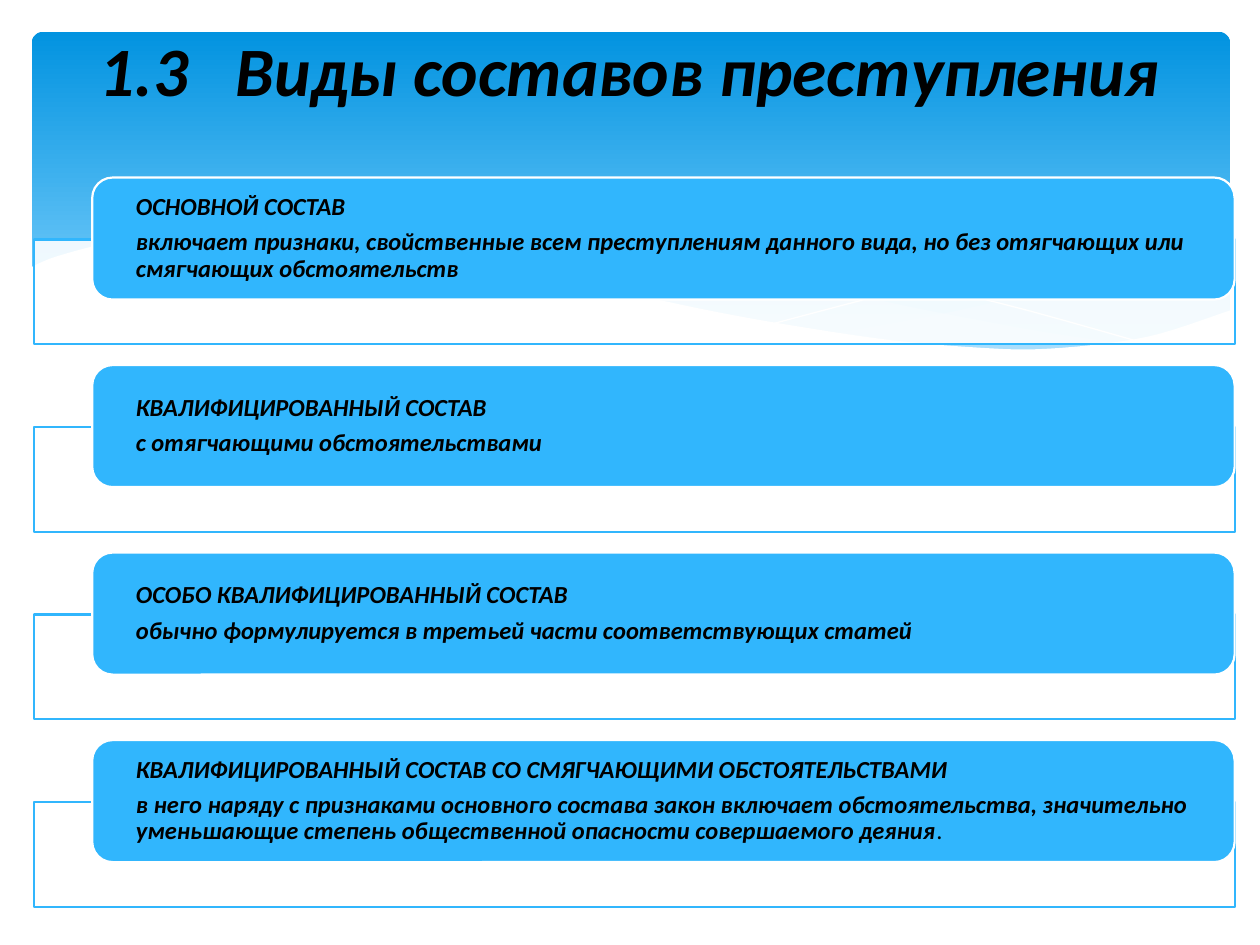
from dataclasses import dataclass

from lxml import etree
from pptx import Presentation
from pptx.dml.color import RGBColor
from pptx.enum.shapes import MSO_SHAPE
from pptx.enum.text import MSO_ANCHOR, MSO_AUTO_SIZE, PP_ALIGN
from pptx.oxml.ns import qn
from pptx.util import Cm, Pt

RECTANGLE, ROUNDED = MSO_SHAPE.RECTANGLE, MSO_SHAPE.ROUNDED_RECTANGLE
MIDDLE = MSO_ANCHOR.MIDDLE
LEFT, CENTER = PP_ALIGN.LEFT, PP_ALIGN.CENTER
TITLE_ONLY = 5


@dataclass(frozen=True)
class Theme:
    font: str = "Calibri"
    ink: str = "000000"
    white: str = "FFFFFF"
    accent: str = "31B6FD"
    wave: str = "C6E7FC"
    sky_top: str = "0293E0"
    sky_bottom: str = "83D3FE"
    title_size: float = 39.6
    body_size: float = 14
    border: float = 1.25


THEME = Theme()

# Edges of the waves, in centimetres from the corner of the banner
RIGHT_WAVE = [
    [(24.15, 4.44), (23.11, 4.62), (21.99, 4.85), (20.49, 5.2), (18.49, 5.66), (16.15, 6.09)],
    [(16.15, 6.09), (17.27, 6.24), (18.59, 6.37), (20.04, 6.42), (21.51, 6.32),
     (22.75, 6.09), (23.46, 5.89), (24.15, 5.63)],
]
LONG_WAVE = [
    [(6.62, 4.21), (7.69, 4.11), (9.01, 4.06), (10.59, 4.16), (12.42, 4.39), (14.19, 4.72),
     (15.34, 5), (17.29, 5.46), (19.05, 5.81), (20.62, 6.09), (22.04, 6.29)],
    [(22.04, 6.29), (20.9, 6.4), (19.58, 6.42), (18.05, 6.35), (16.25, 6.12),
     (14.19, 5.76), (11.83, 5.25), (10.21, 4.85), (8.55, 4.52), (6.62, 4.21)],
]
FALLING_LINE = [[(7.21, 4.31), (8.33, 4.16), (9.93, 4.11), (12.31, 4.24), (14.8, 4.54),
                 (17.01, 4.92), (19.55, 5.48), (22.4, 6.27)]]
RISING_LINE = [[(14.93, 5.89), (17.65, 5.18), (19.83, 4.69), (22.09, 4.29), (24.13, 4.06)]]
WHITE_WAVE = [
    [(-0.06, 4.77), (0.53, 4.52), (1.77, 4.21), (3.07, 4.06), (4.26, 4.03), (5.71, 4.08),
     (7.39, 4.29), (9.29, 4.62), (11.43, 5.13), (13.46, 5.58), (15.26, 5.91), (17.34, 6.22),
     (19.12, 6.37), (20.26, 6.4), (21.59, 6.29), (22.73, 6.09), (24.18, 5.61)],
    [(24.18, 7.72)],
    [(-0.06, 7.72)],
]

CARDS = [
    ("ОСНОВНОЙ СОСТАВ",
     "включает признаки, свойственные всем преступлениям данного вида, "
     "но без отягчающих или смягчающих обстоятельств", ""),
    ("КВАЛИФИЦИРОВАННЫЙ СОСТАВ", "с отягчающими обстоятельствами", ""),
    ("ОСОБО КВАЛИФИЦИРОВАННЫЙ СОСТАВ",
     "обычно формулируется в третьей части соответствующих статей", ""),
    ("КВАЛИФИЦИРОВАННЫЙ СОСТАВ СО СМЯГЧАЮЩИМИ ОБСТОЯТЕЛЬСТВАМИ",
     "в него наряду с признаками основного состава закон включает обстоятельства, "
     "значительно уменьшающие степень общественной опасности совершаемого деяния", "."),
]


def add_span(para, text, size=THEME.body_size, bold=True, italic=True, tracking=0):
    """Add a formatted run; tracking is extra letter spacing in points."""
    span = para.add_run()
    span.text = text
    font = span.font
    font.name, font.size, font.bold, font.italic = THEME.font, Pt(size), bold, italic
    font.color.rgb = RGBColor.from_string(THEME.ink)
    if tracking:
        span._r.get_or_add_rPr().set("spc", str(tracking * 100))


def paint(shape, fill=None, line=None, width=THEME.border, opacity=100):
    shape.shadow.inherit = False
    if fill:
        shape.fill.solid()
        shape.fill.fore_color.rgb = RGBColor.from_string(fill)
        if opacity < 100:
            color = shape._element.spPr.find(qn("a:solidFill")).find(qn("a:srgbClr"))
            etree.SubElement(color, qn("a:alpha")).set("val", str(opacity * 1000))
    else:
        shape.fill.background()
    if line:
        shape.line.color.rgb = RGBColor.from_string(line)
        shape.line.width = Pt(width)
    else:
        shape.line.fill.background()


def smooth_edge(points, steps=5):
    """Return points on a Catmull-Rom curve through the given points."""
    padded = [points[0], *points, points[-1]]
    curve = [points[0]]
    for a, b, c, d in zip(padded, padded[1:], padded[2:], padded[3:]):
        for step in range(1, steps + 1):
            t = step / steps
            curve.append(tuple(
                (2 * q + (r - p) * t + (2 * p - 5 * q + 4 * r - s) * t ** 2
                 + (3 * q - p - 3 * r + s) * t ** 3) / 2
                for p, q, r, s in zip(a, b, c, d)))
    return curve


def add_outline(page, left, top, edges, closed=True):
    points = [(Cm(left + x), Cm(top + y)) for edge in edges for x, y in smooth_edge(edge)]
    builder = page.shapes.build_freeform(*points[0])
    builder.add_line_segments(points[1:], close=closed)
    return builder.convert_to_shape()


def add_banner(page, left, top, width, height):
    sky = page.shapes.add_shape(ROUNDED, Cm(left), Cm(top), Cm(width), Cm(height))
    sky.adjustments[0] = 0.034
    paint(sky)
    sky.fill.gradient()
    sky.fill.gradient_angle = 270
    stops = zip(sky.fill.gradient_stops, (0, 0.9), (THEME.sky_top, THEME.sky_bottom))
    for stop, position, color in stops:
        stop.position = position
        stop.color.rgb = RGBColor.from_string(color)

    for edges, opacity in ((RIGHT_WAVE, 29), (LONG_WAVE, 40)):
        paint(add_outline(page, left, top, edges), THEME.wave, opacity=opacity)
    for edges in (FALLING_LINE, RISING_LINE):
        paint(add_outline(page, left, top, edges, closed=False), line=THEME.white, width=0)
    paint(add_outline(page, left, top, WHITE_WAVE), THEME.white)


def add_card(page, left, top, width, height, heading, detail, ending):
    """Place a framed card; the ending of its detail is set in regular type."""
    drop, indent = 1.25, 1.17
    frame = page.shapes.add_shape(
        RECTANGLE, Cm(left), Cm(top + drop), Cm(width), Cm(height - drop))
    paint(frame, THEME.white, THEME.accent, opacity=90)

    card = page.shapes.add_shape(
        ROUNDED, Cm(left + indent), Cm(top), Cm(width - indent), Cm(height - 0.9))
    paint(card, THEME.accent, THEME.white)
    box = card.text_frame
    box.word_wrap, box.vertical_anchor = True, MIDDLE
    box.margin_left = box.margin_right = Cm(0.76)
    box.margin_top = box.margin_bottom = 0
    for para, text in ((box.paragraphs[0], heading), (box.add_paragraph(), detail)):
        para.alignment, para.line_spacing, para.space_after = LEFT, 0.9, Pt(4.9)
        add_span(para, text)
    if ending:
        add_span(para, ending, bold=False, italic=False)


def add_card_list(page, left, top, width, height):
    gap = 0.42
    card_height = (height + gap) / len(CARDS) - gap
    for index, texts in enumerate(CARDS):
        add_card(page, left, top + index * (card_height + gap), width, card_height, *texts)


def add_title(page, left, top, width, height):
    title = page.shapes.title
    title.left, title.top, title.width, title.height = map(Cm, (left, top, width, height))
    box = title.text_frame
    box.word_wrap, box.auto_size, box.vertical_anchor = True, MSO_AUTO_SIZE.NONE, MIDDLE
    box.margin_top, box.margin_bottom = 0, Cm(1.7)
    para = box.paragraphs[0]
    para.alignment, para.line_spacing = CENTER, 1
    for text, tracking in (("1.3", 0), (" ", 18), ("Виды составов преступления", 0)):
        add_span(para, text, size=THEME.title_size, tracking=tracking)
    page.shapes._spTree.append(title._element)  # in front of the banner


def main():
    deck = Presentation()
    deck.slide_width, deck.slide_height = Cm(25.4), Cm(19.05)
    page = deck.slides.add_slide(deck.slide_layouts[TITLE_ONLY])
    add_banner(page, 0.64, 0.64, 24.16, 6.86)
    add_card_list(page, 0.69, 3.58, 24.2, 14.7)
    add_title(page, 1.27, 0.94, 22.86, 2.59)
    deck.save("out.pptx")


if __name__ == "__main__":
    main()
